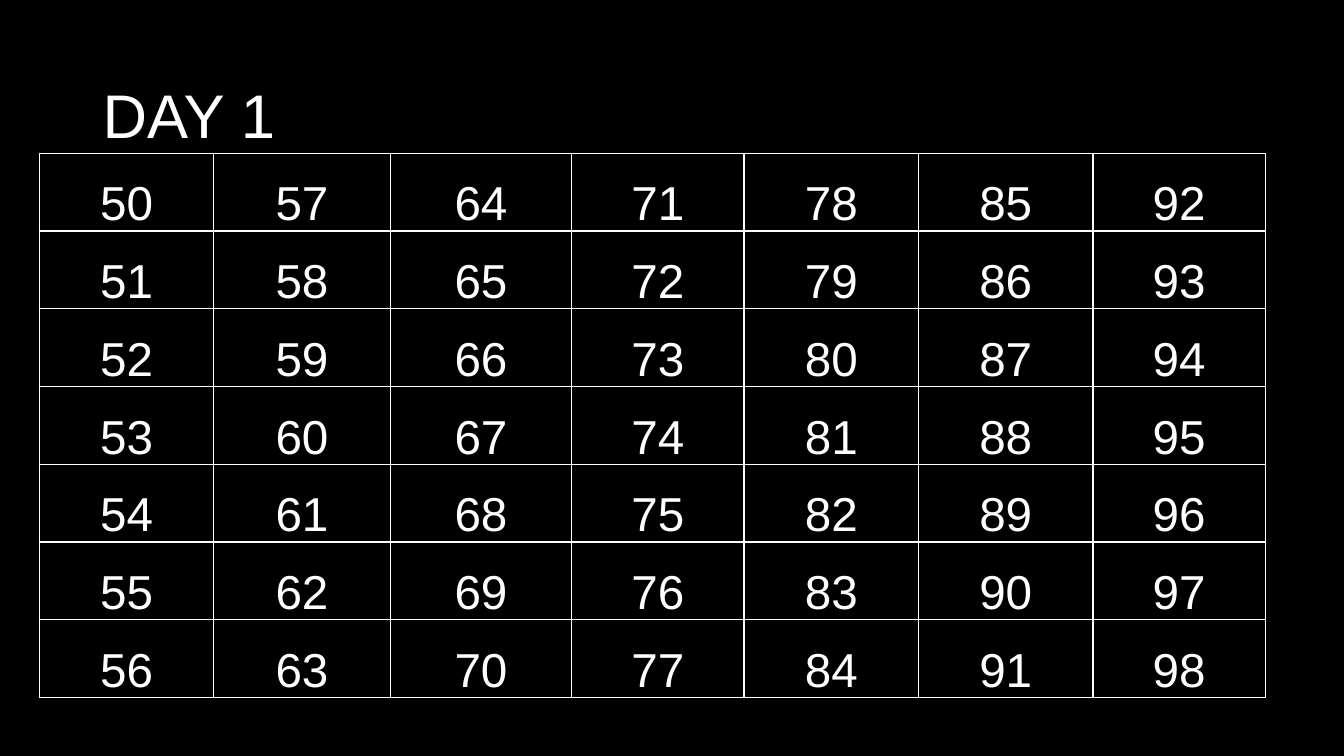
from lxml.etree import SubElement
from pptx import Presentation
from pptx.dml.color import RGBColor
from pptx.enum.text import MSO_VERTICAL_ANCHOR as Anchor, PP_PARAGRAPH_ALIGNMENT as Align
from pptx.oxml.ns import qn
from pptx.util import Inches, Pt

COLORS = {"background": "000000", "text": "FFFFFF", "border": "FFFFFF"}
TITLE_FONT = {"name": "Arial", "size": Pt(44)}
NUMBER_FONT = {"name": "Arial", "size": Pt(34)}
NUMBER_PARA = {"alignment": Align.CENTER, "line_spacing": 1.19, "space_after": Pt(14)}
NUMBER_CELL = {
    "margin_left": 0,
    "margin_top": 0,
    "margin_right": 0,
    "margin_bottom": 0,
    "vertical_anchor": Anchor.BOTTOM,
}
COLUMN_WIDTHS = [1.73, 1.75, 1.8, 1.71, 1.73, 1.73, 1.71]
ROW_COUNT = 7
FIRST_NUMBER = 50


def apply(target, values):
    for name, value in values.items():
        setattr(target, name, value)


def paint(fill, color):
    fill.solid()
    fill.fore_color.rgb = RGBColor.from_string(COLORS[color])


def write(para, text, font):
    span = para.add_run()
    span.text = text
    apply(span.font, font)
    span.font.color.rgb = RGBColor.from_string(COLORS["text"])


def add_borders(cell):
    properties = cell._tc.get_or_add_tcPr()
    for side in ("a:lnL", "a:lnR", "a:lnT", "a:lnB"):
        line = SubElement(properties, qn(side), w=str(Pt(1)))
        fill = SubElement(line, qn("a:solidFill"))
        SubElement(fill, qn("a:srgbClr"), val=COLORS["border"])


def add_title(page, left, top, width, height):
    box = page.shapes.add_textbox(Inches(left), Inches(top), Inches(width), Inches(height))
    frame = box.text_frame
    apply(frame, {"word_wrap": True, "vertical_anchor": Anchor.MIDDLE})
    write(frame.paragraphs[0], "DAY 1", TITLE_FONT)


def add_number_table(page, left, top, width, height):
    table = page.shapes.add_table(
        ROW_COUNT, len(COLUMN_WIDTHS), Inches(left), Inches(top), Inches(width), Inches(height)
    ).table
    apply(table, {"first_row": False, "horz_banding": False})
    for row in table.rows:
        row.height = Inches(height / ROW_COUNT)
    for column_index, column_width in enumerate(COLUMN_WIDTHS):
        table.columns[column_index].width = Inches(column_width)
        for row_index in range(ROW_COUNT):
            cell = table.cell(row_index, column_index)
            apply(cell, NUMBER_CELL)
            add_borders(cell)
            paint(cell.fill, "background")
            para = cell.text_frame.paragraphs[0]
            apply(para, NUMBER_PARA)
            number = FIRST_NUMBER + column_index * ROW_COUNT + row_index
            write(para, str(number), NUMBER_FONT)


def main():
    deck = Presentation()
    apply(deck, {"slide_width": Inches(13.33), "slide_height": Inches(7.5)})
    page = deck.slides.add_slide(deck.slide_layouts[6])
    paint(page.background.fill, "background")
    add_title(page, 0.92, 0.4, 11.5, 1.45)
    add_number_table(page, 0.39, 1.52, sum(COLUMN_WIDTHS), 5.4)
    deck.save("out.pptx")


if __name__ == "__main__":
    main()
